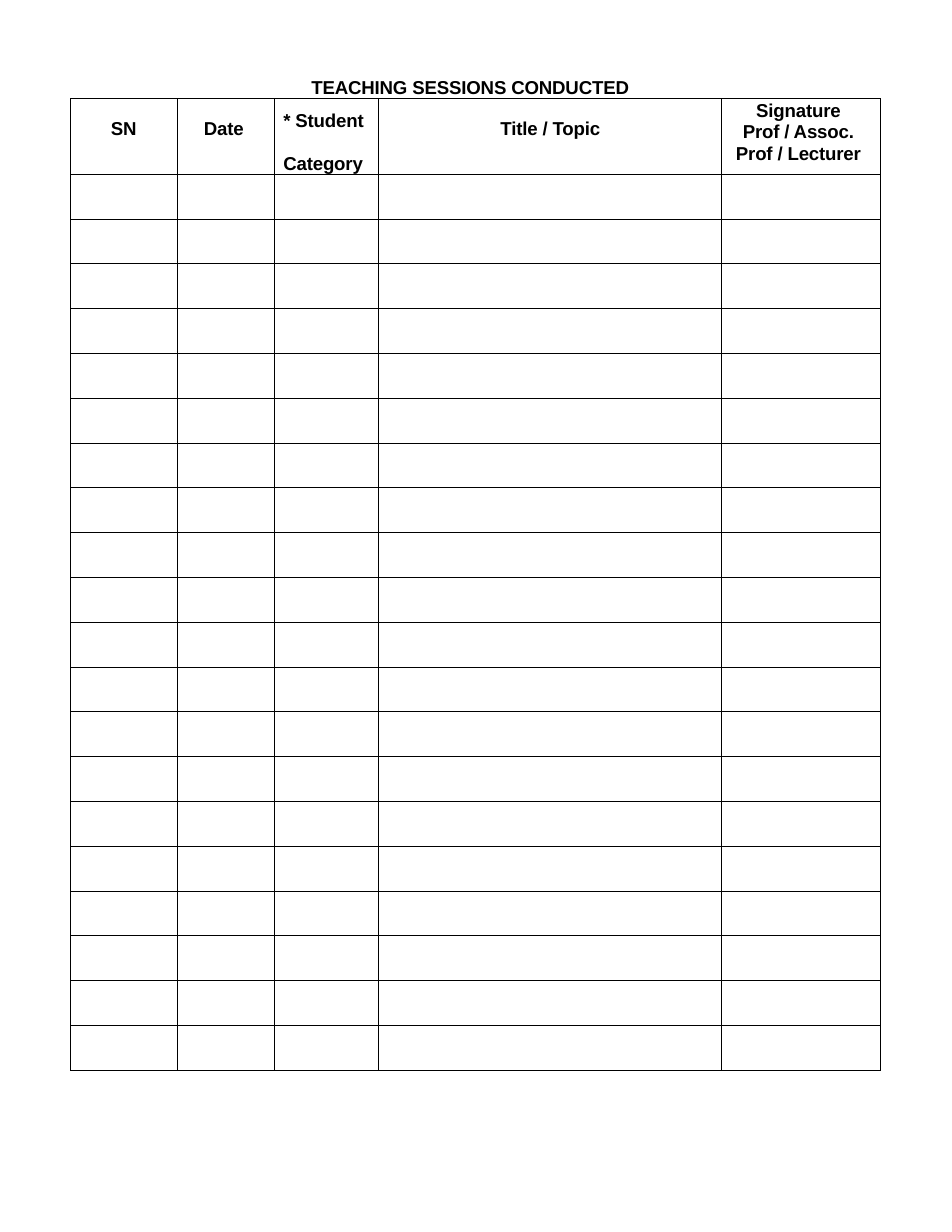
from pptx import Presentation
from pptx.dml.color import RGBColor
from pptx.enum.text import PP_ALIGN as Align
from pptx.oxml import parse_xml
from pptx.oxml.ns import nsdecls
from pptx.util import Inches, Pt

BLACK = RGBColor(0, 0, 0)
TITLE = "TEACHING SESSIONS CONDUCTED"
# Lines, column width, alignment, margins (left, top, right), space before later lines
COLUMNS = [
    (["SN"], 0.95, Align.CENTER, (0, 0.18, 0), 0),
    (["Date"], 0.87, Align.LEFT, (0.24, 0.18, 0), 0),
    (["* Student", "Category"], 0.93, Align.LEFT, (0.08, 0.1, 0), 13.8),
    (["Title / Topic"], 3.06, Align.CENTER, (0.01, 0.18, 0), 0),
    (["Signature", "Prof / Assoc.", "Prof / Lecturer"], 1.42, Align.CENTER,
     (0.1, 0.01, 0.14), 0),
]
SESSIONS = 20
HEADER_HEIGHT, SESSION_HEIGHT = 0.58, 0.4
GROUP = 5  # a thinner rule closes every group of rows


def write_line(paragraph, text, align=Align.LEFT):
    paragraph.alignment = align
    run = paragraph.add_run()
    run.text = text
    for name, value in {"name": "Arial", "size": Pt(12), "bold": True}.items():
        setattr(run.font, name, value)
    run.font.color.rgb = BLACK
    run.font._element.set("spc", "-10")


def set_margins(target, left=0, top=0, right=0):
    sides = {"left": left, "top": top, "right": right, "bottom": 0}
    for side, inches in sides.items():
        setattr(target, f"margin_{side}", Inches(inches))


def set_borders(cell, top, bottom):
    properties = cell._tc.get_or_add_tcPr()
    for index, (side, points) in enumerate(
            {"L": 0.5, "R": 0.5, "T": top, "B": bottom}.items()):
        properties.insert(index, parse_xml(
            f'<a:ln{side} {nsdecls("a")} w="{Pt(points)}"><a:solidFill>'
            f'<a:srgbClr val="{BLACK}"/></a:solidFill></a:ln{side}>'))


def rule_below(row):
    return 0.25 if row % GROUP == 0 else 0.5


prs = Presentation()
prs.slide_width, prs.slide_height = Inches(8.5), Inches(11)
slide = prs.slides.add_slide(prs.slide_layouts[6])

# Title
title = slide.shapes.add_textbox(
    Inches(2.77), Inches(0.67), Inches(2.91), Inches(0.23)).text_frame
title.word_wrap = True
set_margins(title, left=0.01, top=0.01)
title.paragraphs[0].space_before = Pt(1)
write_line(title.paragraphs[0], TITLE)

# Empty log with a header row
log = slide.shapes.add_table(
    SESSIONS + 1, len(COLUMNS), Inches(0.63), Inches(0.88),
    Inches(sum(column[1] for column in COLUMNS)),
    Inches(HEADER_HEIGHT + SESSIONS * SESSION_HEIGHT)).table
log.first_row = log.horz_banding = False
for column, (_, width, *_) in zip(log.columns, COLUMNS):
    column.width = Inches(width)
for number, row in enumerate(log.rows):
    row.height = Inches(SESSION_HEIGHT if number else HEADER_HEIGHT)
    for cell in row.cells:
        set_margins(cell)
        cell.fill.background()
        set_borders(cell, rule_below(number - 1) if number else 0.5,
                    rule_below(number))

# Header text
for cell, (lines, _, align, margins, gap) in zip(log.rows[0].cells, COLUMNS):
    set_margins(cell, *margins)
    frame = cell.text_frame
    for index, line in enumerate(lines):
        paragraph = frame.add_paragraph() if index else frame.paragraphs[0]
        if len(lines) > 1:
            paragraph.line_spacing = Pt(13.8)
        if index:
            paragraph.space_before = Pt(gap)
        write_line(paragraph, line, align)

prs.save("out.pptx")
